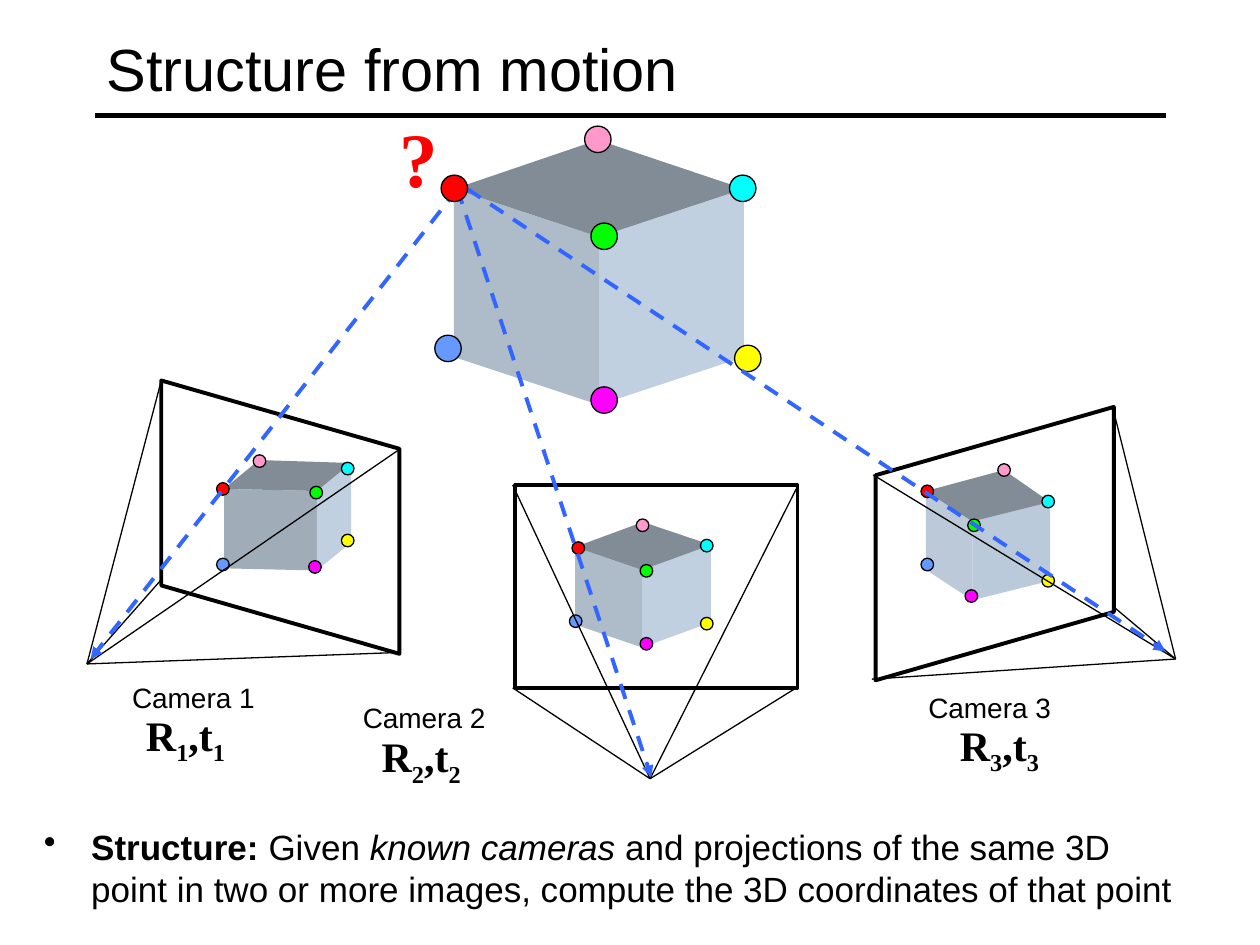
from dataclasses import dataclass
from typing import Any, Optional

import pptx
import pptx.dml.color
import pptx.enum.dml
import pptx.enum.shapes
import pptx.enum.text
import pptx.oxml.ns
import pptx.slide
import pptx.util
from lxml import etree

Pt = pptx.util.Pt
Point = tuple[float, float]
Box = tuple[float, float, float, float]
SHAPES = pptx.enum.shapes.MSO_SHAPE


@dataclass(frozen=True)
class Theme:
    ink: str = "000000"
    question: str = "FF0000"
    sight: str = "3366FF"
    cube_top: str = "828C96"
    # red, green, blue, magenta, yellow, cyan, pink
    markers: tuple[str, ...] = ("FF0101", "00FF00", "6699FF", "FF00FF",
                                "FFFF00", "00FFFF", "FF99CC")
    sans: str = "Arial"
    serif: str = "Times New Roman"
    title: float = 34
    body: float = 20
    label: float = 16
    pose: float = 24
    mark: float = 44
    thin: float = 0.75
    medium: float = 2.25
    thick: float = 3
    dot: float = 7.2
    big_dot: float = 15.1


THEME = Theme()


@dataclass(frozen=True)
class Cube:
    """Top corners, with the drop to the bottom ones and the two side colours."""
    left: Point
    front: Point
    right: Point
    back: Point
    drop: float
    left_side: str = "AEBBC9"
    right_side: str = "C0D0E0"


@dataclass(frozen=True)
class Camera:
    number: int
    frame: Box
    skewed: bool
    mirrored: bool
    cube: Cube
    points: tuple[Point, ...]  # in the order of Theme.markers
    apex: Point
    corners: tuple[Point, ...]
    sight: tuple[Point, Point]
    label: Point
    pose: Point


@dataclass(frozen=True)
class Run:
    text: str
    size: float
    font: str = THEME.sans
    color: str = THEME.ink
    bold: bool = False
    italic: bool = False
    subscript: bool = False


WORLD_CUBE = Cube((259.4, 108), (342.3, 135.4), (425.1, 108), (341.7, 80), 96)
WORLD_POINTS = ((259.6, 107.6), (345.2, 135), (256, 199.1), (345.2, 228.6),
                (427.3, 204.8), (424.4, 107.6), (341.6, 79.6))

CAMERAS = (
    Camera(1, (82.1, 227.5, 156.2, 136.1), True, False,
           Cube((128, 279.4), (181.1, 280.6), (200.6, 264.6), (148, 262.9), 45.4, "A0ADB9"),
           ((127.4, 279.4), (180.7, 281.5), (127.4, 322.6), (180, 324),
            (198.7, 308.9), (198.7, 267.8), (148.3, 263.5)),
           (49.7, 379.4), ((92.2, 217.4), (92.2, 331.2), (223.9, 373), (229, 256.3)),
           ((261.4, 108), (51.8, 376.6)), (68.4, 385.2), (76.3, 401.8)),
    Camera(2, (294.5, 277.2, 161.3, 115.9), False, False,
           Cube((328.6, 312.6), (366.9, 325.7), (406.3, 311.4), (367.4, 298.3), 44.3),
           ((330.5, 313.2), (369.4, 326.2), (329, 355), (369.4, 367.9),
            (403.9, 356.4), (403.9, 311.8), (367.2, 300.2)),
           (371.5, 445), ((455, 279.4), (293, 393.1), (455, 393.1), (293, 277.2)),
           ((261.4, 108), (372.2, 444.2)), (200.2, 396.7), (211, 414)),
    Camera(3, (490.3, 242.6, 156.2, 136.1), True, True,
           Cube((529.1, 280.6), (555.7, 298), (600, 286.9), (573.7, 268.6), 45,
                "BBC9D9", "BACADA"),
           ((529.9, 280.8), (556.6, 300.2), (529.9, 322.6), (555.1, 340.6),
            (599, 331.9), (599, 286.6), (573.8, 268.6)),
           (671.8, 376.6), ((498.2, 388.1), (635.8, 346.3), (635.8, 232.6), (499, 271.4)),
           ((267.1, 108), (666, 372.2)), (523.4, 391), (541.4, 407.5)),
)


def rgb(color: str) -> pptx.dml.color.RGBColor:
    return pptx.dml.color.RGBColor.from_string(color)


def paint(shape: Any, fill: Optional[str], line: Optional[float]) -> None:
    """Set the fill colour and outline width; None means neither is drawn."""
    shape.shadow.inherit = False
    if fill:
        shape.fill.solid()
        shape.fill.fore_color.rgb = rgb(fill)
    else:
        shape.fill.background()
    if line:
        shape.line.color.rgb = rgb(THEME.ink)
        shape.line.width = Pt(line)
    else:
        shape.line.fill.background()


def add_line(slide: pptx.slide.Slide, start: Point, end: Point, width: float,
             color: str = THEME.ink, dashed_arrow: bool = False) -> None:
    line = slide.shapes.add_connector(pptx.enum.shapes.MSO_CONNECTOR.STRAIGHT,
                                      *(Pt(v) for v in start + end))
    line.line.color.rgb = rgb(color)
    line.line.width = Pt(width)
    if dashed_arrow:
        line.line.dash_style = pptx.enum.dml.MSO_LINE.DASH
        etree.SubElement(line.line._get_or_add_ln(), pptx.oxml.ns.qn("a:tailEnd"),
                         type="triangle")
    etree.SubElement(line._element.spPr, pptx.oxml.ns.qn("a:effectLst"))


def add_text(slide: pptx.slide.Slide, box: Box, runs: list[Run],
             wrap: bool = True, grow: bool = True) -> Any:
    frame = slide.shapes.add_textbox(*(Pt(v) for v in box)).text_frame
    frame.word_wrap = wrap
    if grow:
        frame.auto_size = pptx.enum.text.MSO_AUTO_SIZE.SHAPE_TO_FIT_TEXT
    for item in runs:
        run = frame.paragraphs[0].add_run()
        run.text = item.text
        run.font.size = Pt(item.size)
        run.font.name = item.font
        run.font.color.rgb = rgb(item.color)
        run.font.bold = item.bold
        run.font.italic = item.italic
        if item.subscript:
            run.font._element.set("baseline", "-25000")
    return frame


def add_cube(slide: pptx.slide.Slide, cube: Cube) -> None:
    def below(corner: Point) -> Point:
        return corner[0], corner[1] + cube.drop

    faces = (
        ((cube.left, cube.front, below(cube.front), below(cube.left)), cube.left_side),
        ((cube.front, cube.right, below(cube.right), below(cube.front)), cube.right_side),
        ((cube.left, cube.back, cube.right, cube.front), THEME.cube_top),
    )
    for corners, color in faces:
        outline = [(Pt(x), Pt(y)) for x, y in corners]
        builder = slide.shapes.build_freeform(*outline[0])
        builder.add_line_segments(outline[1:], close=True)
        paint(builder.convert_to_shape(), color, None)


def add_dot(shapes: Any, center: Point, size: float, color: str) -> None:
    x, y = (Pt(v - size / 2) for v in center)
    paint(shapes.add_shape(SHAPES.OVAL, x, y, Pt(size), Pt(size)), color, THEME.thin)


def add_camera(slide: pptx.slide.Slide, camera: Camera) -> None:
    preset = SHAPES.PARALLELOGRAM if camera.skewed else SHAPES.RECTANGLE
    frame = slide.shapes.add_shape(preset, *(Pt(v) for v in camera.frame))
    paint(frame, None, THEME.medium)
    if camera.skewed:
        frame.adjustments[0] = 0.287
        frame.rotation = 270 if camera.mirrored else 90
    if camera.mirrored:
        frame._element.spPr.find(pptx.oxml.ns.qn("a:xfrm")).set("flipH", "1")
    add_cube(slide, camera.cube)
    dots = slide.shapes.add_group_shape().shapes
    for center, color in zip(camera.points, THEME.markers):
        add_dot(dots, center, THEME.dot, color)
    for corner in camera.corners:
        add_line(slide, corner, camera.apex, THEME.thin)
    add_text(slide, (*camera.label, 85.7, 26.6),
             [Run(f"Camera {camera.number}", THEME.label)], wrap=False)
    add_text(slide, (*camera.pose, 70.6, 36),
             [Run(text, THEME.pose, THEME.serif, bold=True, subscript=text.isdigit())
              for text in ("R", str(camera.number), ",t", str(camera.number))])


def main() -> None:
    deck = pptx.Presentation()
    deck.slide_width, deck.slide_height = Pt(720), Pt(540)
    slide = deck.slides.add_slide(deck.slide_layouts[6])

    add_line(slide, (54, 66.2), (666, 66.2), THEME.thick)
    title = add_text(slide, (54, 5.8, 612, 66.2),
                     [Run("Structure from motion", THEME.title)], grow=False)
    title.vertical_anchor = pptx.enum.text.MSO_ANCHOR.MIDDLE

    add_cube(slide, WORLD_CUBE)
    for camera in CAMERAS:
        add_camera(slide, camera)
    for center, color in zip(WORLD_POINTS[1:], THEME.markers[1:]):
        add_dot(slide.shapes, center, THEME.big_dot, color)
    for camera in CAMERAS:
        add_line(slide, *camera.sight, THEME.medium, THEME.sight, dashed_arrow=True)
    add_dot(slide.shapes, WORLD_POINTS[0], THEME.big_dot, THEME.markers[0])
    add_text(slide, (221, 59.8, 36.7, 60.5),
             [Run("?", THEME.mark, THEME.serif, THEME.question, bold=True)], wrap=False)

    task = add_text(slide, (18, 468, 666, 72), [
        Run("Structure: ", THEME.body, bold=True),
        Run("Given ", THEME.body),
        Run("known cameras", THEME.body, italic=True),
        Run(" and projections of the same 3D point in two or more images, "
            "compute the 3D coordinates of that point", THEME.body),
    ], grow=False).paragraphs[0]
    task.space_before = Pt(4)
    bullet = task._p.get_or_add_pPr()
    bullet.set("marL", str(Pt(27)))
    bullet.set("indent", str(Pt(-27)))
    etree.SubElement(bullet, pptx.oxml.ns.qn("a:buChar"), char="•")

    deck.save("out.pptx")


if __name__ == "__main__":
    main()
